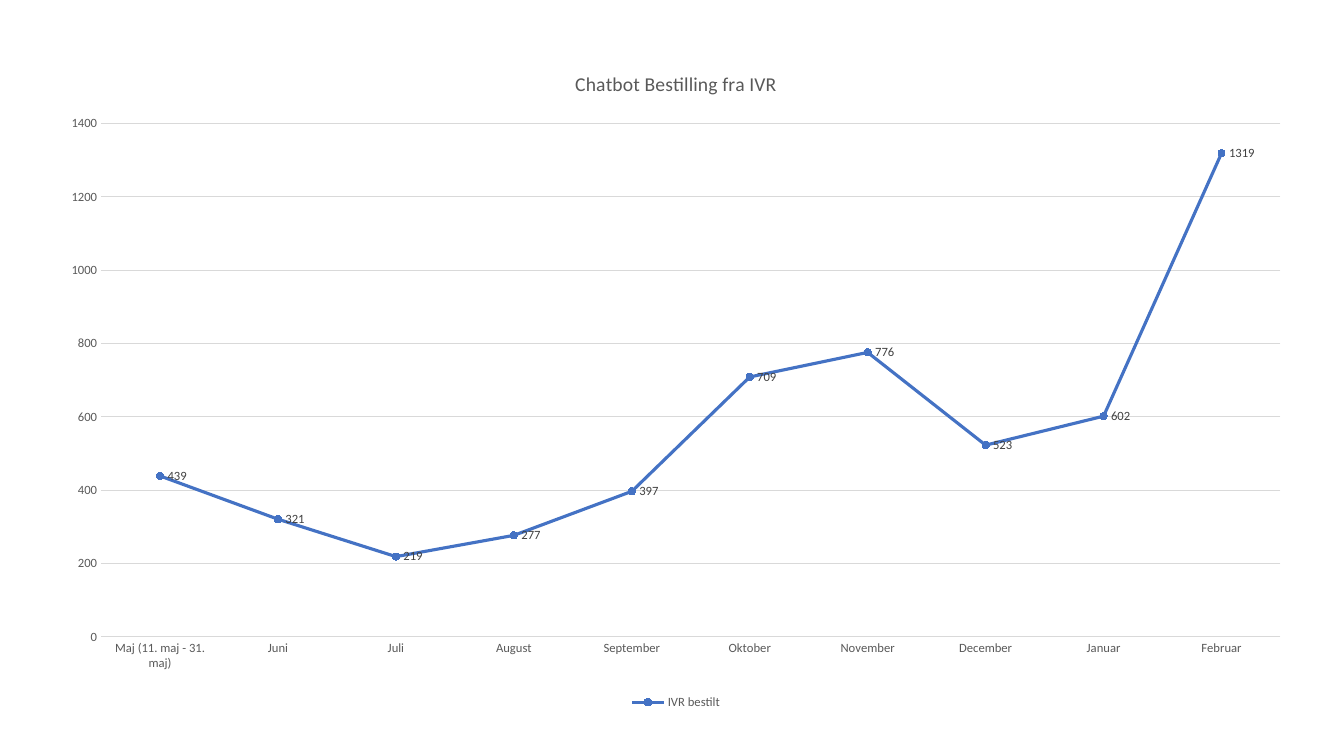
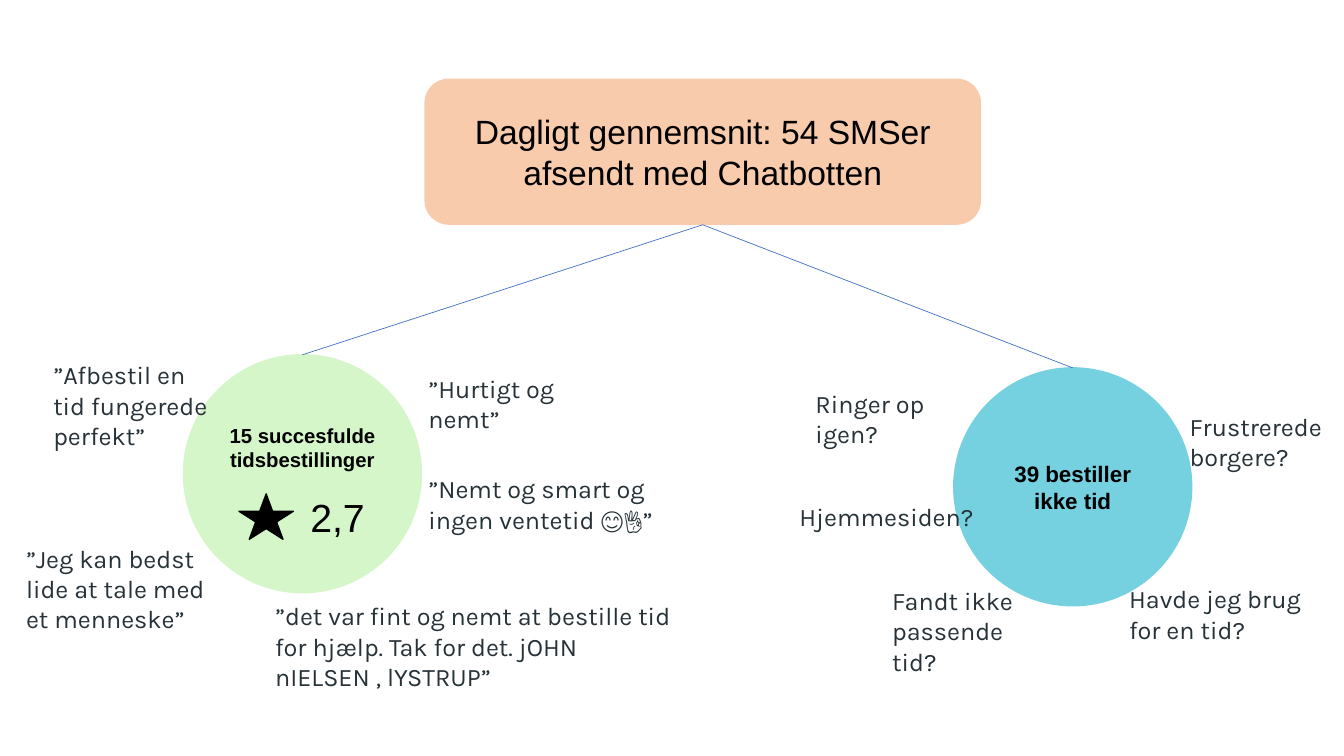
"""Build two slides on chatbot bookings: a monthly line chart and a feedback map."""
from lxml import etree
from pptx import Presentation
from pptx.chart.data import CategoryChartData
from pptx.dml.color import RGBColor
from pptx.enum.chart import XL_CHART_TYPE, XL_LABEL_POSITION, XL_LEGEND_POSITION, XL_MARKER_STYLE, XL_TICK_MARK
from pptx.enum.shapes import MSO_CONNECTOR, MSO_SHAPE
from pptx.enum.text import MSO_ANCHOR, MSO_AUTO_SIZE, PP_ALIGN
from pptx.oxml.ns import qn
from pptx.util import Inches, Pt

LINE_CHART = XL_CHART_TYPE.LINE_MARKERS_STACKED
RIGHT = XL_LABEL_POSITION.RIGHT
BOTTOM = XL_LEGEND_POSITION.BOTTOM
CIRCLE = XL_MARKER_STYLE.CIRCLE
NO_TICK = XL_TICK_MARK.NONE
STRAIGHT = MSO_CONNECTOR.STRAIGHT
OVAL, ROUNDED, STAR = MSO_SHAPE.OVAL, MSO_SHAPE.ROUNDED_RECTANGLE, MSO_SHAPE.STAR_5_POINT
MIDDLE = MSO_ANCHOR.MIDDLE
GROW = MSO_AUTO_SIZE.SHAPE_TO_FIT_TEXT
CENTER = PP_ALIGN.CENTER

BLUE, GREY, GRID, BLACK, INK = "4472C4", "595959", "D9D9D9", "000000", "263238"
PEACH, GREEN, TEAL = "F8CBAD", "D4F6C8", "75D0DF"


def color(hex_value):
    return RGBColor.from_string(hex_value)


def style(font, size, hex_value, name, bold=False):
    font.size, font.name, font.bold = Pt(size), name, bold
    font.color.rgb = color(hex_value)


prs = Presentation()
prs.slide_width, prs.slide_height = Inches(13.33), Inches(7.5)
blank = prs.slide_layouts[6]

s = prs.slides.add_slide(blank)
data = CategoryChartData()
data.categories = ["Maj (11. maj - 31. maj)", "Juni", "Juli", "August", "September",
                   "Oktober", "November", "December", "Januar", "Februar"]
data.add_series("IVR bestilt", [439, 321, 219, 277, 397, 709, 776, 523, 602, 1319])
chart = s.shapes.add_chart(LINE_CHART, Inches(0.46), Inches(0.48),
                           Inches(12.49), Inches(6.6), data).chart
style(chart.font, 10, BLACK, "Calibri")
chart.has_title = True
r = chart.chart_title.text_frame.paragraphs[0].add_run()
r.text = "Chatbot Bestilling fra IVR"
style(r.font, 14, GREY, "Calibri")
chart.has_legend = True
chart.legend.position = BOTTOM
chart.legend.include_in_layout = False
style(chart.legend.font, 9, GREY, "Calibri")

for axis in (chart.category_axis, chart.value_axis):
    axis.major_tick_mark = axis.minor_tick_mark = NO_TICK
    style(axis.tick_labels.font, 9, GREY, "Calibri")
chart.value_axis.format.line.fill.background()
chart.value_axis.has_major_gridlines = True
for line in (chart.category_axis.format.line, chart.value_axis.major_gridlines.format.line):
    line.color.rgb = color(GRID)
    line.width = Pt(0.75)

series = chart.plots[0].series[0]
series.smooth = False
series.format.line.color.rgb = color(BLUE)
series.format.line.width = Pt(2.25)
marker = series.marker
marker.style, marker.size = CIRCLE, 5
marker.format.fill.solid()
marker.format.fill.fore_color.rgb = color(BLUE)
marker.format.line.color.rgb = color(BLUE)
labels = series.data_labels
labels.show_value = True
labels.position = RIGHT
style(labels.font, 9, "404040", "Calibri")

s = prs.slides.add_slide(blank)
nodes = []
for kind, x, y, w, h, fill, text, size, bold, lift in (
    (ROUNDED, 4.21, 0.78, 5.52, 1.45, PEACH,
     "Dagligt gennemsnit: 54 SMSer afsendt med Chatbotten", 24, False, 0),
    (OVAL, 1.82, 3.52, 2.36, 2.36, GREEN, "15 succesfulde tidsbestillinger", 14.5, True, 0.52),
    (OVAL, 9.46, 3.65, 2.36, 2.36, TEAL, "39 bestiller ikke tid", 16, True, 0),
    (STAR, 2.37, 4.9, 0.54, 0.45, BLACK, "", 0, False, 0),
):
    sp = s.shapes.add_shape(kind, Inches(x), Inches(y), Inches(w), Inches(h))
    sp.shadow.inherit = False
    sp.fill.solid()
    sp.fill.fore_color.rgb = color(fill)
    if kind == ROUNDED:
        sp.line.fill.background()
    else:
        sp.line.color.rgb = color(fill)
        sp.line.width = Pt(1)
    if text:
        tf = sp.text_frame
        tf.word_wrap = True
        tf.vertical_anchor = MIDDLE
        tf.margin_bottom = Inches(0.05 + lift)
        p = tf.paragraphs[0]
        p.alignment = CENTER
        r = p.add_run()
        r.text = text
        style(r.font, size, BLACK, "Arial", bold)
    nodes.append(sp)

average, booked, unbooked, star = nodes
for target in (booked, unbooked):
    cn = s.shapes.add_connector(STRAIGHT, 0, 0, 0, 0)
    cn.begin_connect(average, 2)
    cn.end_connect(target, 0)
    cn.line.color.rgb = color(BLUE)
    cn.line.width = Pt(0.5)
    etree.SubElement(cn._element.spPr, qn("a:effectLst"))

quote = (18, INK, "Karla")
for x, y, w, h, text, look in (
    (2.98, 4.84, 0.86, 0.57, "2,7", (28, BLACK, "Arial")),
    (0.16, 5.34, 2.07, 1.01, "”Jeg kan bedst lide at tale med et menneske”", quote),
    (4.15, 3.65, 1.48, 0.71, "”Hurtigt og nemt”", quote),
    (0.43, 3.52, 1.88, 1.01, "”Afbestil en tid fungerede perfekt”", quote),
    (4.15, 4.65, 2.76, 0.71, "”Nemt og smart og ingen ventetid 😊👌”", quote),
    (2.63, 5.91, 4.28, 1.01,
     "”det var fint og nemt at bestille tid for hjælp. Tak for det. jOHN nIELSEN , lYSTRUP”", quote),
    (7.99, 3.8, 1.93, 0.71, "Ringer op igen?", quote),
    (11.7, 4.03, 1.6, 0.71, "Frustrerede borgere?", quote),
    (11.1, 5.74, 2.07, 0.71, "Havde jeg brug for en tid?", quote),
    (7.83, 4.92, 2.07, 0.4, "Hjemmesiden?", quote),
    (8.75, 5.76, 1.76, 1.01, "Fandt ikke passende tid?", quote),
):
    tf = s.shapes.add_textbox(Inches(x), Inches(y), Inches(w), Inches(h)).text_frame
    tf.word_wrap = True
    tf.auto_size = GROW
    r = tf.paragraphs[0].add_run()
    r.text = text
    style(r.font, *look)

prs.save("out.pptx")
